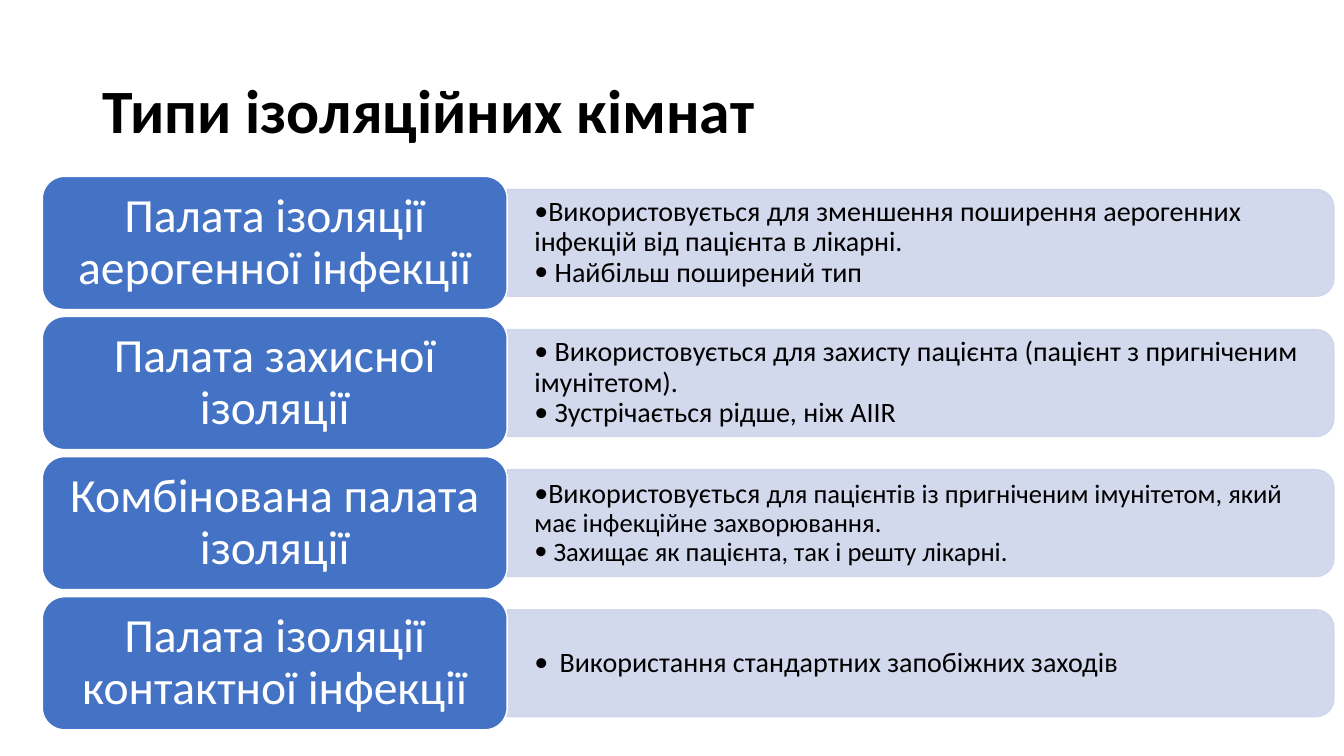
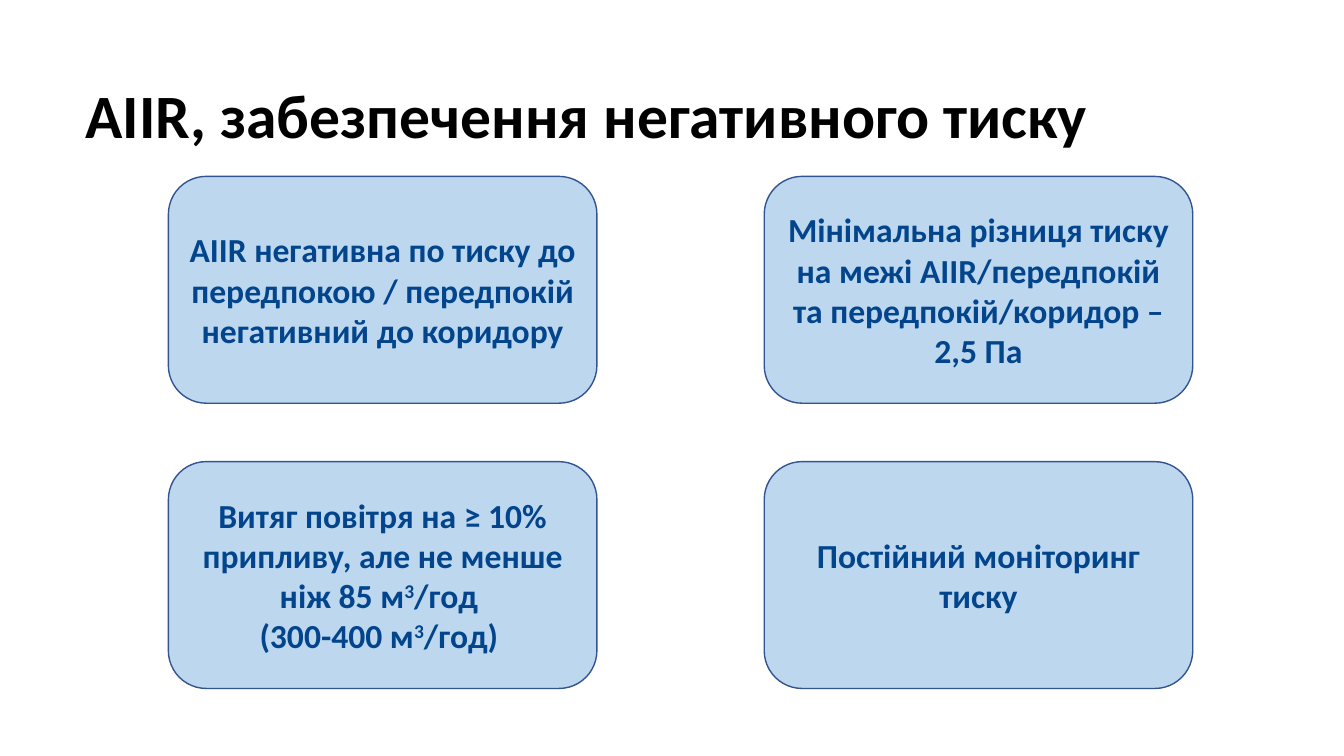
"""Build two slides about isolation rooms and negative pressure."""
from lxml import etree
from pptx import Presentation
from pptx.dml.color import RGBColor
from pptx.enum.shapes import MSO_SHAPE
from pptx.enum.text import MSO_ANCHOR, MSO_AUTO_SIZE, PP_ALIGN
from pptx.oxml.ns import qn
from pptx.util import Inches, Pt

ROUNDED = MSO_SHAPE.ROUNDED_RECTANGLE
TWO_ROUNDED = MSO_SHAPE.ROUND_2_SAME_RECTANGLE
MIDDLE = MSO_ANCHOR.MIDDLE
LEFT, CENTER = PP_ALIGN.LEFT, PP_ALIGN.CENTER
NO_AUTOFIT = MSO_AUTO_SIZE.NONE
FONT = "Calibri"
COLORS = {
    "text": "000000",
    "white": "FFFFFF",
    "label": "4472C4",
    "band": "CFD5EA",
    "card": "BDD7EE",
    "card_line": "325491",
    "card_text": "02458D",
}


def write_text(frame, paragraphs, size=20, color="text", bold=False, align=LEFT,
               spacing=0.9, insets=(0.1, 0.05), bullet_indent=None):
    """Fill a frame; a paragraph is a list of (text, size, superscript) runs or a string."""
    frame.word_wrap = True
    frame.auto_size = NO_AUTOFIT
    frame.vertical_anchor = MIDDLE
    frame.margin_left = frame.margin_right = Inches(insets[0])
    frame.margin_top = frame.margin_bottom = Inches(insets[1])
    for index, runs in enumerate(paragraphs):
        paragraph = frame.add_paragraph() if index else frame.paragraphs[0]
        paragraph.alignment = align
        paragraph.line_spacing = spacing
        paragraph.space_before = paragraph.space_after = Pt(0)
        if bullet_indent is not None:
            properties = paragraph._p.get_or_add_pPr()
            properties.set("marL", str(Inches(bullet_indent)))
            properties.set("indent", str(-Inches(bullet_indent)))
            etree.SubElement(properties, qn("a:buFont")).set("typeface", FONT)
            etree.SubElement(properties, qn("a:buChar")).set("char", "•")
        if isinstance(runs, str):
            runs = [(runs, size, False)]
        for text, run_size, superscript in runs:
            run = paragraph.add_run()
            run.text = text
            run.font.name = FONT
            run.font.size = Pt(run_size)
            run.font.bold = bold
            run.font.color.rgb = RGBColor.from_string(COLORS[color])
            if superscript:
                run.font._element.set("baseline", "30000")


def add_box(slide, preset, left, top, width, height, fill, line):
    """Add a filled and outlined preset shape, placed in inches."""
    shape = slide.shapes.add_shape(
        preset, Inches(left), Inches(top), Inches(width), Inches(height))
    shape.shadow.inherit = False
    shape.fill.solid()
    shape.fill.fore_color.rgb = RGBColor.from_string(COLORS[fill])
    shape.line.color.rgb = RGBColor.from_string(COLORS[line])
    shape.line.width = Pt(1)
    return shape


presentation = Presentation()
presentation.slide_width = Inches(13.33)
presentation.slide_height = Inches(7.5)

titles = [
    ("Типи ізоляційних кімнат", 0.92, 0.4),
    ("AIIR, забезпечення негативного тиску", 0.75, 0.45),
]
slides = []
for title_text, left, top in titles:
    slide = presentation.slides.add_slide(presentation.slide_layouts[5])
    title = slide.shapes.title
    title.left, title.top = Inches(left), Inches(top)
    title.width, title.height = Inches(11.5), Inches(1.45)
    write_text(title.text_frame, [title_text], size=44, bold=True)
    slides.append(slide)
rooms_slide, pressure_slide = slides

rooms = [
    ("Палата ізоляції аерогенної інфекції", 0, [
        "Використовується для зменшення поширення аерогенних інфекцій від пацієнта в лікарні.",
        " Найбільш поширений тип"]),
    ("Палата захисної ізоляції", 0, [
        " Використовується для захисту пацієнта (пацієнт з пригніченим імунітетом).",
        " Зустрічається рідше, ніж AIIR"]),
    ("Комбінована палата ізоляції", 0, [
        [("Використовується", 20, False),
         (" для пацієнтів із пригніченим імунітетом, який має інфекційне захворювання.",
          19, False)],
        [(" Захищає як пацієнта, так і решту лікарні.", 19, False)]]),
    ("Палата ізоляції контактної інфекції", 0.25, [
        "Використання стандартних запобіжних заходів"]),
]
label_left, label_width, label_height = 0.42, 4.61, 1.32
band_left = label_left + label_width
band_length, band_height = 8.2, 1.06
first_center, row_pitch = 2.41, 1.39
for row, (name, indent, details) in enumerate(rooms):
    center = first_center + row * row_pitch
    band = add_box(rooms_slide, TWO_ROUNDED,
                   band_left + (band_length - band_height) / 2, center - band_length / 2,
                   band_height, band_length, "band", "band")
    band.rotation = 90
    for band_color in band._element.spPr.iter(qn("a:srgbClr")):
        etree.SubElement(band_color, qn("a:alpha")).set("val", "90000")
    details_box = rooms_slide.shapes.add_textbox(
        Inches(band_left), Inches(center - 0.48), Inches(8.14), Inches(0.96))
    write_text(details_box.text_frame, details, insets=(0.27, 0.14), bullet_indent=indent)
    label = add_box(rooms_slide, ROUNDED, label_left, center - label_height / 2,
                    label_width, label_height, "label", "white")
    write_text(label.text_frame, [name], size=34, color="white", align=CENTER,
               insets=(0.2, 0.14))

requirements = [
    ["AIIR негативна по тиску до передпокою / передпокій негативний до коридору"],
    ["Мінімальна різниця тиску на межі AIIR/передпокій та передпокій/коридор – 2,5 Па"],
    [[("Витяг повітря на ≥ 10% припливу, але не менше ніж 85 м", 24, False),
      ("3", 24, True), ("/год ", 24, False)],
     [("(300-400 м", 24, False), ("3", 24, True), ("/год) ", 24, False)]],
    ["Постійний моніторинг тиску"],
]
for index, requirement in enumerate(requirements):
    row, column = divmod(index, 2)
    card = add_box(pressure_slide, ROUNDED, 1.67 + column * 5.91, 1.75 + row * 2.83,
                   4.25, 2.25, "card", "card_line")
    write_text(card.text_frame, requirement, size=24, color="card_text", bold=True,
               align=CENTER, spacing=1.0)

presentation.save("out.pptx")
